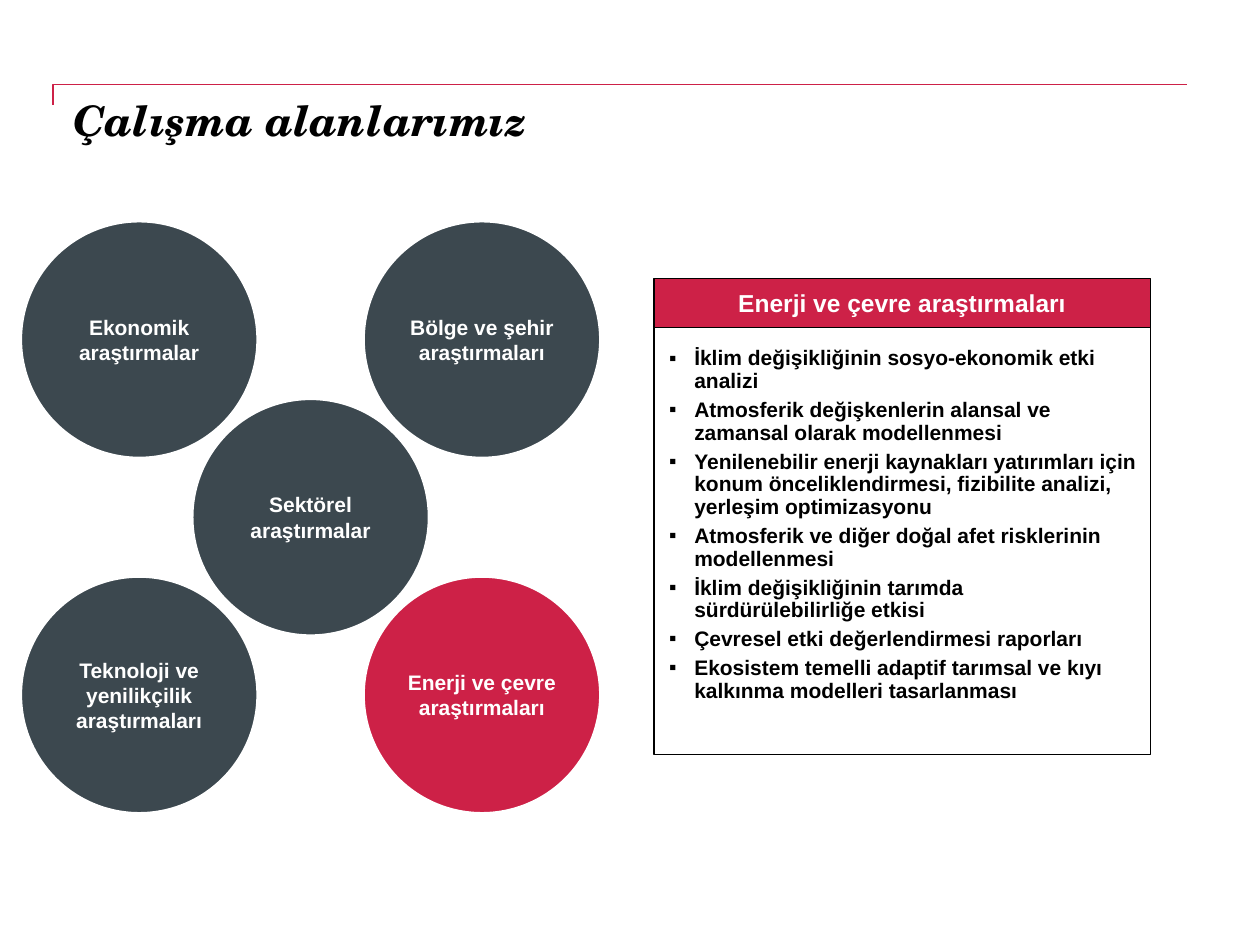
"""Build the slide that presents the research areas and details energy and environment."""
import dataclasses

import lxml.etree
import pptx
import pptx.dml.color
import pptx.enum.shapes
import pptx.enum.text
import pptx.oxml.ns
import pptx.util

RED = pptx.dml.color.RGBColor(0xCD, 0x21, 0x47)
SLATE = pptx.dml.color.RGBColor(0x3C, 0x48, 0x4F)
WHITE = pptx.dml.color.RGBColor(0xFF, 0xFF, 0xFF)
BLACK = pptx.dml.color.RGBColor(0x00, 0x00, 0x00)

SLIDE_WIDTH = pptx.util.Inches(10)
SLIDE_HEIGHT = pptx.util.Inches(7.5)

GRID_LEFT, GRID_TOP = 0.16, 1.75
COLUMN_STEP, ROW_STEP = 1.36, 1.41
CIRCLE_SIZE = 1.89
PANEL_LEFT, PANEL_TOP, PANEL_WIDTH = 5.19, 2.21, 3.94
HEADER_HEIGHT, LIST_HEIGHT = 0.39, 3.39


@dataclasses.dataclass(frozen=True)
class Box:
    """Position and size in inches."""

    left: float
    top: float
    width: float
    height: float

    def apply(self, shape) -> None:
        """Move and size a shape to this box."""
        shape.left, shape.top, shape.width, shape.height = map(
            pptx.util.Inches, dataclasses.astuple(self)
        )


@dataclasses.dataclass(frozen=True)
class Area:
    """A research area at a column and row of the circle grid."""

    text: str
    column: int
    row: int
    color: pptx.dml.color.RGBColor = SLATE


AREAS = (
    Area("Ekonomik araştırmalar", 0, 0),
    Area("Teknoloji ve yenilikçilik araştırmaları", 0, 2),
    Area("Bölge ve şehir araştırmaları", 2, 0),
    Area("Enerji ve çevre araştırmaları", 2, 2, RED),
    Area("Sektörel araştırmalar", 1, 1),
)

TOPICS = (
    "İklim değişikliğinin sosyo-ekonomik etki analizi",
    "Atmosferik değişkenlerin alansal ve zamansal olarak modellenmesi",
    "Yenilenebilir enerji kaynakları yatırımları için konum önceliklendirmesi, "
    "fizibilite analizi, yerleşim optimizasyonu",
    "Atmosferik ve diğer doğal afet risklerinin modellenmesi",
    "İklim değişikliğinin tarımda sürdürülebilirliğe etkisi",
    "Çevresel etki değerlendirmesi raporları",
    "Ekosistem temelli adaptif tarımsal ve kıyı kalkınma modelleri tasarlanması",
)


def format_text(text_frame, size: float, color, alignment, anchor,
                insets=(0, 0, 0, 0), name: str = "Arial", italic: bool = False) -> None:
    """Format a text frame and all of its runs."""
    text_frame.word_wrap = True
    text_frame.auto_size = pptx.enum.text.MSO_AUTO_SIZE.NONE
    text_frame.vertical_anchor = anchor
    (text_frame.margin_left, text_frame.margin_top,
     text_frame.margin_right, text_frame.margin_bottom) = map(pptx.util.Inches, insets)
    for paragraph in text_frame.paragraphs:
        paragraph.alignment = alignment
        for run in paragraph.runs:
            run.font.name = name
            run.font.size = pptx.util.Pt(size)
            run.font.bold = True
            run.font.italic = italic
            run.font.color.rgb = color


def paint(shape, fill, line, line_width: float) -> None:
    """Set the fill and outline of a shape."""
    shape.fill.solid()
    shape.fill.fore_color.rgb = fill
    shape.line.color.rgb = line
    shape.line.width = pptx.util.Pt(line_width)


def add_label(slide, kind, box: Box, text: str, fill, line, line_width: float,
              size: float) -> None:
    """Add a filled shape with centred white text."""
    shape = slide.shapes.add_shape(kind, 0, 0, 0, 0)
    box.apply(shape)
    shape.shadow.inherit = False
    paint(shape, fill, line, line_width)
    shape.text_frame.text = text
    format_text(shape.text_frame, size, WHITE, pptx.enum.text.PP_ALIGN.CENTER,
                pptx.enum.text.MSO_ANCHOR.MIDDLE)


def add_bullet(paragraph) -> None:
    """Give a paragraph a hanging black square bullet."""
    properties = paragraph._p.get_or_add_pPr()
    indent = pptx.util.Inches(0.2)
    properties.set("marL", str(indent))
    properties.set("indent", str(-indent))
    qualify = pptx.oxml.ns.qn
    bullet_color = lxml.etree.SubElement(properties, qualify("a:buClr"))
    lxml.etree.SubElement(bullet_color, qualify("a:srgbClr"), val=str(BLACK))
    lxml.etree.SubElement(properties, qualify("a:buFont"), typeface="Arial")
    lxml.etree.SubElement(properties, qualify("a:buChar"), char="▪")


def add_title_rule(slide) -> None:
    """Draw the thin corner line above the title."""
    inches = pptx.util.Inches
    builder = slide.shapes.build_freeform(inches(0.42), inches(0.83))
    builder.add_line_segments(
        [(inches(0.42), inches(0.67)), (inches(9.42), inches(0.67))], close=False
    )
    rule = builder.convert_to_shape()
    rule.shadow.inherit = False
    rule.fill.background()
    rule.line.color.rgb = RED
    rule.line.width = pptx.util.Pt(1)


def fill_title(title) -> None:
    """Write and place the title."""
    Box(0.58, 0.75, 8.83, 1).apply(title)
    title.text_frame.text = "Çalışma alanlarımız"
    format_text(title.text_frame, 24, BLACK, pptx.enum.text.PP_ALIGN.LEFT,
                pptx.enum.text.MSO_ANCHOR.TOP, name="TeX Gyre Schola", italic=True)


def fill_topics(body) -> None:
    """Write and place the bulleted list of topics."""
    Box(PANEL_LEFT, PANEL_TOP + HEADER_HEIGHT, PANEL_WIDTH, LIST_HEIGHT).apply(body)
    paint(body, WHITE, BLACK, 0.75)
    body.text_frame.text = "\n".join(TOPICS)
    for index, paragraph in enumerate(body.text_frame.paragraphs):
        add_bullet(paragraph)
        paragraph.line_spacing = 0.9
        paragraph.space_before = pptx.util.Pt(3.6 if index else 0)
    format_text(body.text_frame, 12, BLACK, pptx.enum.text.PP_ALIGN.LEFT,
                pptx.enum.text.MSO_ANCHOR.TOP, insets=(0.12, 0.16, 0.08, 0.04))


def main() -> None:
    """Build and save the presentation."""
    presentation = pptx.Presentation()
    presentation.slide_width = SLIDE_WIDTH
    presentation.slide_height = SLIDE_HEIGHT
    slide = presentation.slides.add_slide(presentation.slide_layouts[1])
    shape_kinds = pptx.enum.shapes.MSO_SHAPE

    add_title_rule(slide)
    fill_title(slide.shapes.title)
    fill_topics(slide.placeholders[1])
    add_label(slide, shape_kinds.RECTANGLE,
              Box(PANEL_LEFT, PANEL_TOP, PANEL_WIDTH, HEADER_HEIGHT),
              "Enerji ve çevre araştırmaları", RED, BLACK, 0.75, 14)
    for area in AREAS:
        box = Box(GRID_LEFT + area.column * COLUMN_STEP, GRID_TOP + area.row * ROW_STEP,
                  CIRCLE_SIZE, CIRCLE_SIZE)
        add_label(slide, shape_kinds.OVAL, box, area.text, area.color, WHITE, 2.25, 12)

    presentation.save("out.pptx")


if __name__ == "__main__":
    main()
